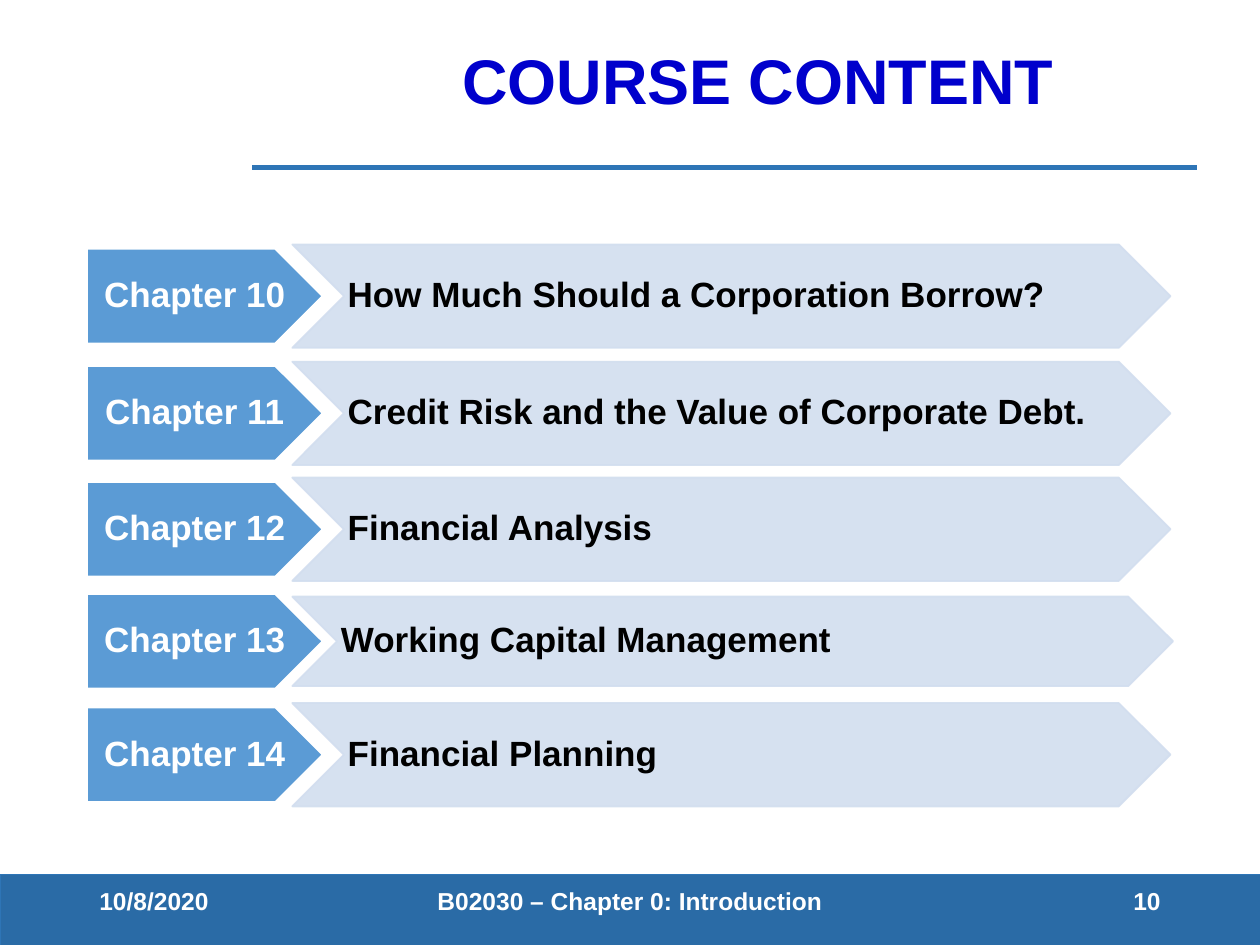
from dataclasses import dataclass

from lxml.etree import SubElement
from pptx import Presentation
from pptx.dml.color import RGBColor
from pptx.enum.shapes import MSO_CONNECTOR, MSO_SHAPE
from pptx.enum.text import MSO_ANCHOR as Anchor, PP_ALIGN as Align
from pptx.oxml.ns import qn
from pptx.util import Inches, Pt


@dataclass(frozen=True)
class Theme:
    font: str = "Arial"
    title: str = "0000CC"
    rule: str = "2E75B6"
    bar: str = "2A6BA6"
    plate: str = "5B9BD5"
    band: str = "D2DEEF"
    light: str = "FFFFFF"
    dark: str = "000000"
    title_size: int = 36
    row_size: int = 20
    footer_size: int = 14


@dataclass(frozen=True)
class Chapter:
    number: int
    topic: str
    middle: float
    band_width: float = 6.97
    band_height: float = 0.82


@dataclass(frozen=True)
class FooterItem:
    text: str
    left: float
    width: float
    align: Align


THEME = Theme()
PLATE_LEFT, PLATE_WIDTH, PLATE_HEIGHT = 0.69, 1.87, 0.75
BAND_LEFT = 2.32
BAND_ALPHA = 90
CHAPTERS = [
    Chapter(10, "How Much Should a Corporation Borrow?", 2.35),
    Chapter(11, "Credit Risk and the Value of Corporate Debt.", 3.28),
    Chapter(12, "Financial Analysis", 4.2),
    Chapter(13, "Working Capital Management", 5.09, 6.99, 0.71),
    Chapter(14, "Financial Planning", 5.99),
]
FOOTER = [
    FooterItem("10/8/2020", 0.69, 2.25, Align.LEFT),
    FooterItem("B02030 – Chapter 0: Introduction", 3.31, 3.38, Align.CENTER),
    FooterItem("10", 7.06, 2.25, Align.RIGHT),
]


def write(shape, text: str, size: int, color: str, align: Align, spacing: float = 1.0) -> None:
    """Put one bold, vertically centred paragraph into a shape."""
    frame = shape.text_frame
    frame.word_wrap = True
    frame.vertical_anchor = Anchor.MIDDLE
    frame.text = text
    para = frame.paragraphs[0]
    para.alignment = align
    para.line_spacing = spacing
    para.space_before = Pt(0)
    para.font.name = THEME.font
    para.font.size = Pt(size)
    para.font.bold = True
    para.font.color.rgb = RGBColor.from_string(color)


def add_block(slide, kind: MSO_SHAPE, left: float, top: float, width: float,
              height: float, fill: str, line: str):
    """Add a flat preset shape with a thin outline."""
    block = slide.shapes.add_shape(
        kind, Inches(left), Inches(top), Inches(width), Inches(height))
    block.shadow.inherit = False
    block.fill.solid()
    block.fill.fore_color.rgb = RGBColor.from_string(fill)
    block.line.color.rgb = RGBColor.from_string(line)
    block.line.width = Pt(1)
    return block


def set_alpha(shape, percent: int) -> None:
    """Make the fill and the outline of a shape translucent."""
    for color in shape._element.spPr.iter(qn("a:srgbClr")):
        SubElement(color, qn("a:alpha"), val=str(percent * 1000))


def set_row_margins(shape) -> None:
    frame = shape.text_frame
    frame.margin_left, frame.margin_right = Inches(0.03), 0
    frame.margin_top = frame.margin_bottom = Inches(0.01)


def add_chapter(slide, chapter: Chapter) -> None:
    """Draw a chapter plate and its topic band around a common middle."""
    plate = add_block(slide, MSO_SHAPE.PENTAGON, PLATE_LEFT,
                      chapter.middle - PLATE_HEIGHT / 2, PLATE_WIDTH, PLATE_HEIGHT,
                      THEME.plate, THEME.light)
    band = add_block(slide, MSO_SHAPE.CHEVRON, BAND_LEFT,
                     chapter.middle - chapter.band_height / 2,
                     chapter.band_width, chapter.band_height, THEME.band, THEME.band)
    set_alpha(band, BAND_ALPHA)
    for shape in (plate, band):
        set_row_margins(shape)
    write(plate, f"Chapter {chapter.number}", THEME.row_size, THEME.light, Align.CENTER, 0.9)
    write(band, chapter.topic, THEME.row_size, THEME.dark, Align.LEFT, 0.9)


def add_rule(slide) -> None:
    rule = slide.shapes.add_connector(
        MSO_CONNECTOR.STRAIGHT, Inches(2), Inches(1.33), Inches(9.5), Inches(1.33))
    rule.line.color.rgb = RGBColor.from_string(THEME.rule)
    rule.line.width = Pt(3)
    SubElement(rule._element.spPr, qn("a:effectLst"))


def add_footer_item(slide, item: FooterItem) -> None:
    box = slide.shapes.add_textbox(
        Inches(item.left), Inches(6.95), Inches(item.width), Inches(0.4))
    write(box, item.text, THEME.footer_size, THEME.light, item.align)


def main() -> None:
    deck = Presentation()
    deck.slide_width, deck.slide_height = Inches(10), Inches(7.5)
    page = deck.slides.add_slide(deck.slide_layouts[5])

    # Footer bar and title rule
    add_block(page, MSO_SHAPE.RECTANGLE, 0, 6.94, 10.04, 0.58, THEME.bar, THEME.rule)
    add_rule(page)

    # Title
    title = page.shapes.title
    title.left, title.top = Inches(2), Inches(0)
    title.width, title.height = Inches(8.03), Inches(1.33)
    write(title, "COURSE CONTENT", THEME.title_size, THEME.title, Align.CENTER, 0.9)

    # Chapter rows
    for chapter in CHAPTERS:
        add_chapter(page, chapter)

    # Footer texts
    for item in FOOTER:
        add_footer_item(page, item)

    deck.save("out.pptx")


if __name__ == "__main__":
    main()
